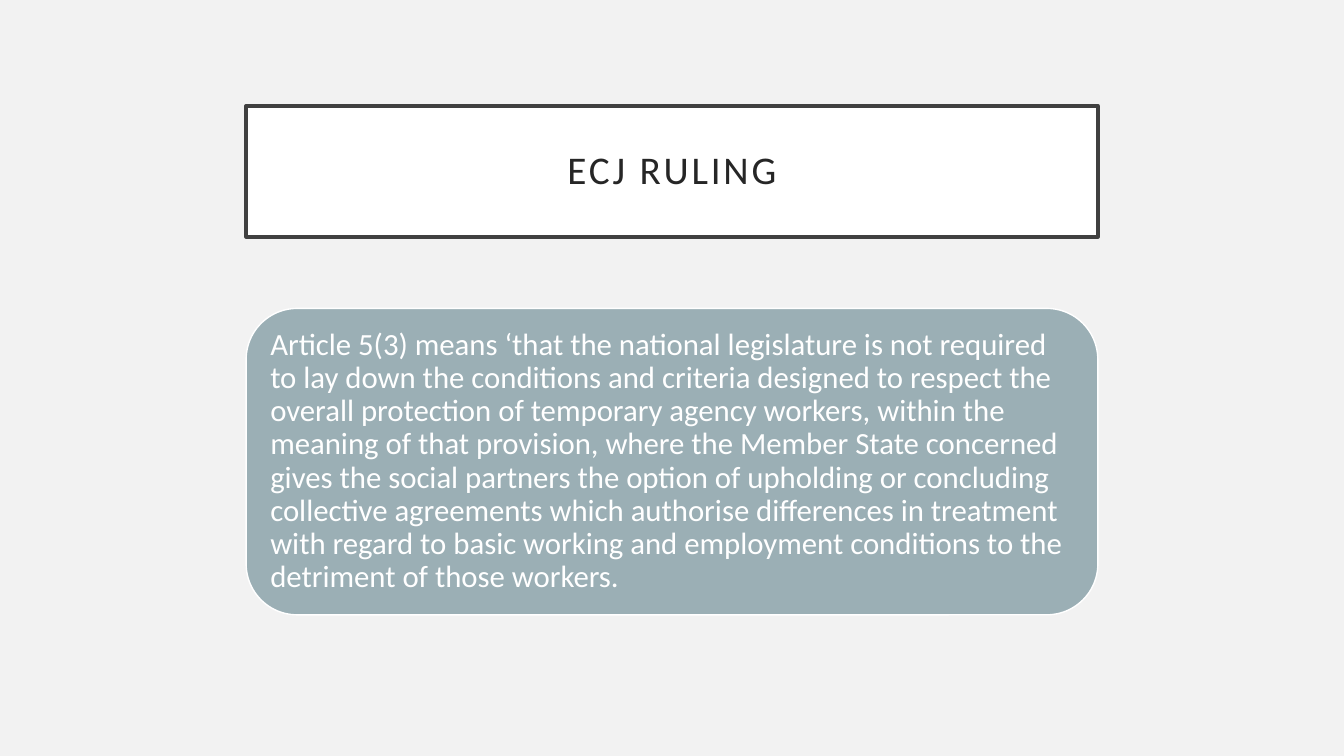
import pptx
import pptx.dml.color
import pptx.enum.shapes
import pptx.enum.text
import pptx.util

Pt = pptx.util.Pt
RGBColor = pptx.dml.color.RGBColor
MSO_SHAPE = pptx.enum.shapes.MSO_SHAPE
PP_ALIGN = pptx.enum.text.PP_ALIGN

BACKGROUND = RGBColor(0xF2, 0xF2, 0xF2)
WHITE = RGBColor(0xFF, 0xFF, 0xFF)
FRAME = RGBColor(0x40, 0x40, 0x40)
TITLE_INK = RGBColor(0x26, 0x26, 0x26)
PANEL = RGBColor(0x9B, 0xAF, 0xB5)

SLIDE_WIDTH, SLIDE_HEIGHT = 960, 540
BOX_WIDTH = 608.4
BOX_LEFT = (SLIDE_WIDTH - BOX_WIDTH) / 2

RULING = (
    "Article\u00a05(3) means ‘that the national legislature is not required "
    "to lay down the conditions and criteria designed to respect the "
    "overall protection of temporary agency workers, within the "
    "meaning of that provision, where the Member State concerned "
    "gives the social partners the option of upholding or concluding "
    "collective agreements which authorise differences in treatment "
    "with regard to basic working and employment conditions to the "
    "detriment of those workers."
)


def add_box(slide, outline, top, height, fill, line, line_width):
    """Add a filled box, centred across the slide."""
    box = slide.shapes.add_shape(
        outline, Pt(BOX_LEFT), Pt(top), Pt(BOX_WIDTH), Pt(height))
    box.shadow.inherit = False
    box.fill.solid()
    box.fill.fore_color.rgb = fill
    box.line.color.rgb = line
    box.line.width = Pt(line_width)
    return box


def write_text(box, text, size, color, alignment, inset):
    """Write one paragraph in a box and return it."""
    frame = box.text_frame
    frame.word_wrap = True
    frame.vertical_anchor = pptx.enum.text.MSO_ANCHOR.MIDDLE
    frame.margin_left = frame.margin_right = Pt(inset)
    frame.margin_top = frame.margin_bottom = Pt(inset)
    paragraph = frame.paragraphs[0]
    paragraph.text = text
    paragraph.alignment = alignment
    paragraph.line_spacing = 0.9
    paragraph.font.name = "Calibri"
    paragraph.font.size = Pt(size)
    paragraph.font.color.rgb = color
    return paragraph


def set_letter_spacing(paragraph, points):
    for run in paragraph.runs:
        run.font._element.set("spc", str(points * 100))


def main():
    deck = pptx.Presentation()
    deck.slide_width, deck.slide_height = Pt(SLIDE_WIDTH), Pt(SLIDE_HEIGHT)
    slide = deck.slides.add_slide(deck.slide_layouts[6])
    slide.background.fill.solid()
    slide.background.fill.fore_color.rgb = BACKGROUND

    # Title in a frame
    title_box = add_box(slide, MSO_SHAPE.RECTANGLE, 75.6, 93.6, WHITE, FRAME, 2.5)
    title = write_text(title_box, "ECJ RULING", 28, TITLE_INK, PP_ALIGN.CENTER, 14.4)
    set_letter_spacing(title, 2)

    # Ruling in a rounded panel
    ruling_panel = add_box(
        slide, MSO_SHAPE.ROUNDED_RECTANGLE, 220.3, 218.9, PANEL, WHITE, 1)
    write_text(ruling_panel, RULING, 22, WHITE, PP_ALIGN.LEFT, 6.6)

    deck.save("out.pptx")


if __name__ == "__main__":
    main()
